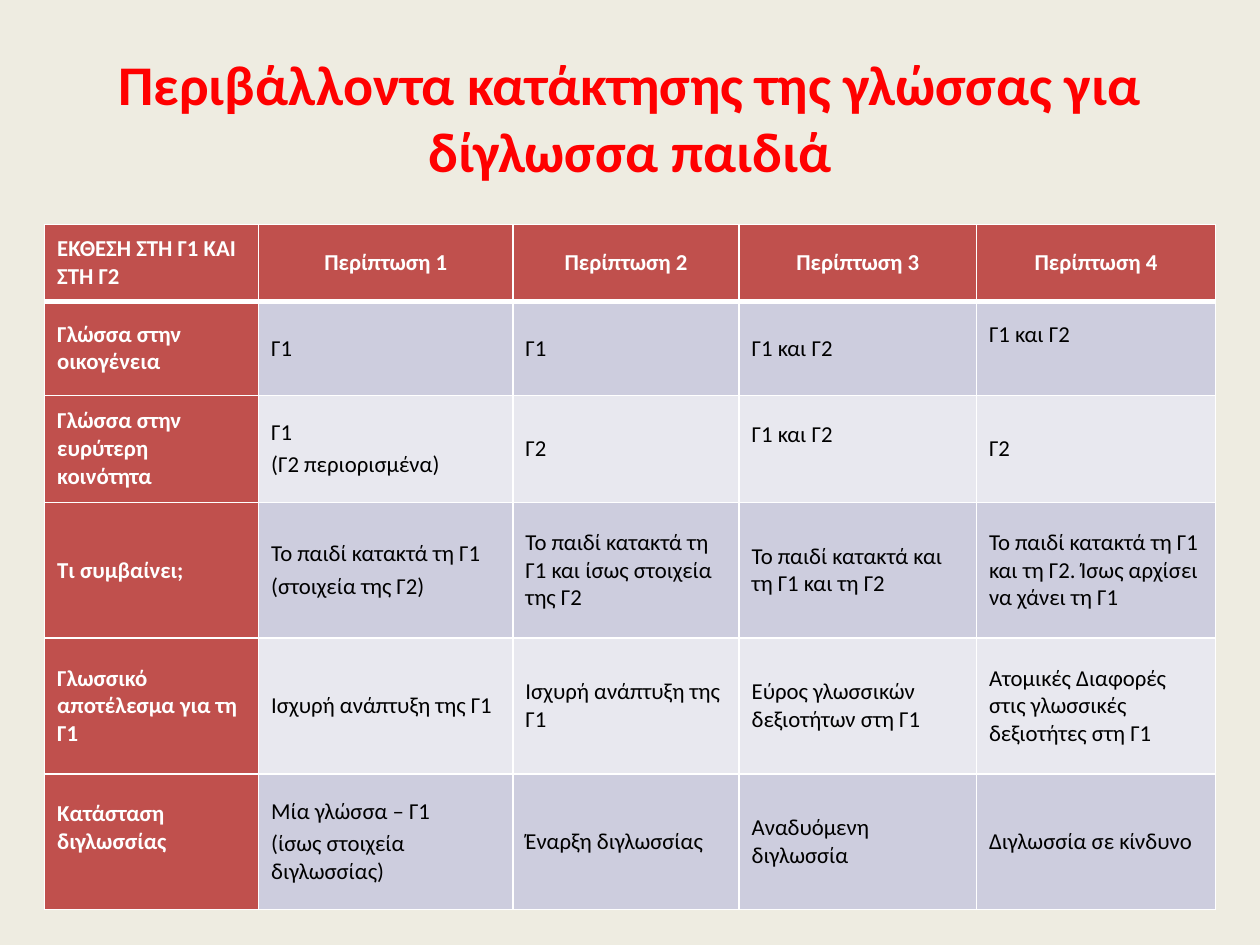
from lxml import etree
from pptx import Presentation
from pptx.dml.color import RGBColor
from pptx.enum import text
from pptx.oxml import ns
from pptx.util import Pt

FONT = "Calibri"
COLORS = {
    "background": "EEECE1", "title": "FF0000", "heading": "C0504D",
    "odd": "CDCDDE", "even": "E8E8EF", "light": "FFFFFF", "dark": "000000",
}
TITLE = "Περιβάλλοντα κατάκτησης της γλώσσας για δίγλωσσα παιδιά"
ROWS = [
    ["ΕΚΘΕΣΗ ΣΤΗ Γ1 ΚΑΙ ΣΤΗ Γ2", "Περίπτωση 1", "Περίπτωση 2", "Περίπτωση 3", "Περίπτωση 4"],
    ["Γλώσσα στην οικογένεια", "Γ1", "Γ1", "Γ1 και Γ2", "Γ1 και Γ2"],
    ["Γλώσσα στην ευρύτερη κοινότητα", "Γ1\n(Γ2 περιορισμένα)", "Γ2", "Γ1 και Γ2", "Γ2"],
    ["Τι συμβαίνει;", "Το παιδί κατακτά τη Γ1\n(στοιχεία της Γ2)",
     "Το παιδί κατακτά τη Γ1 και ίσως στοιχεία της Γ2",
     "Το παιδί κατακτά και τη Γ1 και τη Γ2",
     "Το παιδί κατακτά τη Γ1 και τη Γ2. Ίσως αρχίσει να χάνει τη Γ1"],
    ["Γλωσσικό αποτέλεσμα για τη Γ1", "Ισχυρή ανάπτυξη της Γ1", "Ισχυρή ανάπτυξη της Γ1",
     "Εύρος γλωσσικών δεξιοτήτων στη Γ1",
     "Ατομικές Διαφορές στις γλωσσικές δεξιοτήτες στη Γ1"],
    ["Κατάσταση διγλωσσίας", "Μία γλώσσα – Γ1\n(ίσως στοιχεία διγλωσσίας)",
     "Έναρξη διγλωσσίας", "Αναδυόμενη διγλωσσία", "Διγλωσσία σε κίνδυνο"],
]
COLUMN_WIDTHS = [122.3, 145.3, 129.3, 135.6, 136.6]
ROW_HEIGHTS = [43.9, 53.7, 61.2, 77.6, 77.6, 77.6]
RAISED_CELLS = {(1, 4), (2, 3), (5, 0)}


def color(name):
    return RGBColor.from_string(COLORS[name])


def add_run(paragraph, words, size, color_name, bold):
    run = paragraph.add_run()
    run.text = words
    run.font.name = FONT
    run.font.size = Pt(size)
    run.font.bold = bold
    run.font.color.rgb = color(color_name)


def set_borders(cell, widths):
    properties = cell._tc.get_or_add_tcPr()
    for index, (side, width) in enumerate(widths.items()):
        line = etree.Element(ns.qn(f"a:ln{side}"), w=str(Pt(width)))
        fill = etree.SubElement(line, ns.qn("a:solidFill"))
        etree.SubElement(fill, ns.qn("a:srgbClr"), val=COLORS["light"])
        properties.insert(index, line)


def fill_cell(cell, row, column, words):
    heading = row == 0 or column == 0
    stripe = "odd" if row % 2 else "even"
    cell.fill.solid()
    cell.fill.fore_color.rgb = color("heading" if heading else stripe)
    cell.vertical_anchor = text.MSO_ANCHOR.MIDDLE
    if (row, column) in RAISED_CELLS:
        cell.margin_bottom = Pt(19.6)
    set_borders(cell, {"L": 1, "R": 1, "T": 3 if row == 1 else 1, "B": 3 if row == 0 else 1})
    frame = cell.text_frame
    for index, part in enumerate(words.split("\n")):
        paragraph = frame.add_paragraph() if index else frame.paragraphs[0]
        if index:
            paragraph.space_before = Pt(2.6)
        if row == 0 and column:
            paragraph.alignment = text.PP_ALIGN.CENTER
        add_run(paragraph, part, 13, "light" if heading else "dark", heading)


def main():
    presentation = Presentation()
    presentation.slide_width, presentation.slide_height = Pt(720), Pt(540)
    slide = presentation.slides.add_slide(presentation.slide_layouts[5])
    slide.background.fill.solid()
    slide.background.fill.fore_color.rgb = color("background")

    title = slide.shapes.title
    title.left, title.top, title.width, title.height = Pt(36), Pt(21.6), Pt(648), Pt(90)
    title.text_frame.vertical_anchor = text.MSO_ANCHOR.MIDDLE
    paragraph = title.text_frame.paragraphs[0]
    paragraph.alignment = text.PP_ALIGN.CENTER
    add_run(paragraph, TITLE, 32, "title", True)

    table = slide.shapes.add_table(
        len(ROWS), len(COLUMN_WIDTHS), Pt(25.5), Pt(128.3),
        Pt(sum(COLUMN_WIDTHS)), Pt(sum(ROW_HEIGHTS))).table
    for column, width in zip(table.columns, COLUMN_WIDTHS):
        column.width = Pt(width)
    for row, height in zip(table.rows, ROW_HEIGHTS):
        row.height = Pt(height)
    for row, entries in enumerate(ROWS):
        for column, words in enumerate(entries):
            fill_cell(table.cell(row, column), row, column, words)

    presentation.save("out.pptx")


if __name__ == "__main__":
    main()
